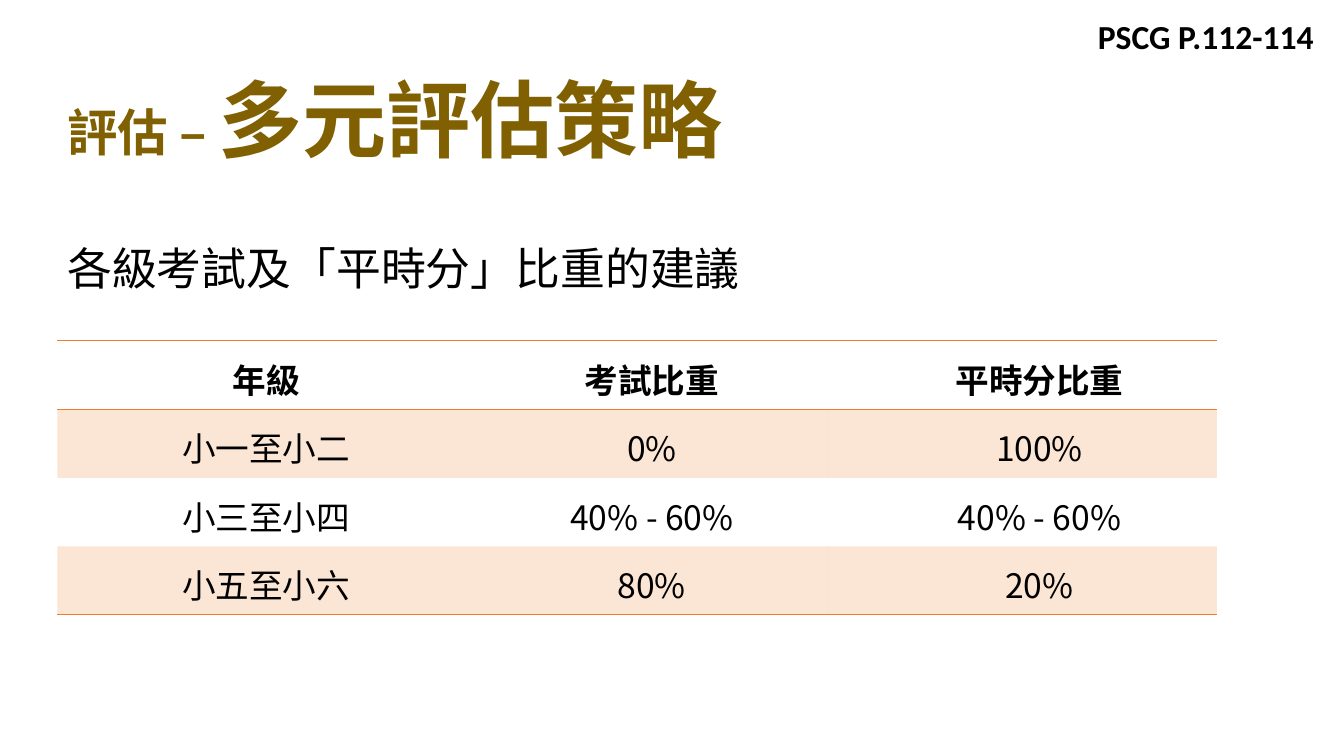
"""Build the slide on diversified assessment strategies and score weightings."""
from dataclasses import dataclass

from lxml import etree
from pptx import Presentation
from pptx.dml.color import RGBColor
from pptx.enum.text import MSO_ANCHOR, MSO_AUTO_SIZE, PP_ALIGN
from pptx.oxml.ns import qn
from pptx.util import Inches, Pt

LEFT, CENTER = PP_ALIGN.LEFT, PP_ALIGN.CENTER
TOP, MIDDLE = MSO_ANCHOR.TOP, MSO_ANCHOR.MIDDLE
GROW = MSO_AUTO_SIZE.SHAPE_TO_FIT_TEXT
TITLE_ONLY = 5
PLAIN_TABLE_STYLE = "{2D5ABB26-0587-4C30-8999-92F81FD0307C}"


@dataclass(frozen=True)
class Theme:
    """Colours, fonts and type sizes."""
    cjk_font: str = "Noto Sans CJK SC"
    latin_font: str = "Calibri"
    ink: str = "000000"
    gold: str = "806000"
    orange: str = "ED7D31"
    band_alpha: int = 20
    rule_points: int = 1
    line_spacing: float = 1.15
    title_size: int = 60
    topic_size: int = 36
    lead_size: int = 32
    body_size: int = 24


@dataclass(frozen=True)
class Area:
    """A place on the slide in inches."""
    left: float
    top: float
    width: float
    height: float

    def lengths(self) -> tuple:
        """Give left, top, width and height as lengths."""
        return tuple(map(Inches, (self.left, self.top, self.width, self.height)))


@dataclass(frozen=True)
class Label:
    """A text box with one line of text."""
    text: str
    area: Area
    size: int
    font: str
    bold: bool = False
    wrap: bool = False


THEME = Theme()
TITLE_AREA = Area(0.57, 0.62, 6.79, 1.11)
TABLE_AREA = Area(0.57, 3.38, 11.5, 2.72)
COLUMN_WIDTHS = (3.81, 3.84, 3.85)
CELL_MARGIN = 0.07
CELL_INDENT = 0.33
LABELS = (
    Label("各級考試及「平時分」比重的建議", Area(0.57, 2.34, 6.93, 0.64),
          THEME.lead_size, THEME.cjk_font),
    Label("PSCG P.112-114", Area(10.79, 0.11, 2.54, 0.5),
          THEME.body_size, THEME.latin_font, bold=True, wrap=True),
)
WEIGHTINGS = (
    ("年級", "考試比重", "平時分比重"),
    ("小一至小二", "0%", "100%"),
    ("小三至小四", "40% - 60%", "40% - 60%"),
    ("小五至小六", "80%", "20%"),
)


def add_span(para, text: str, *, size: int, font: str = THEME.cjk_font,
             color: str = THEME.ink, bold: bool = False) -> None:
    """Append formatted text to a paragraph."""
    span = para.add_run()
    span.text = text
    span.font.size = Pt(size)
    span.font.name = font
    span.font.bold = bold
    span.font.color.rgb = RGBColor.from_string(color)


def add_title(page) -> None:
    """Place and format the title placeholder."""
    title = page.shapes.title
    title.left, title.top, title.width, title.height = TITLE_AREA.lengths()
    frame = title.text_frame
    frame.word_wrap = False
    frame.auto_size = GROW
    frame.vertical_anchor = TOP
    para = frame.paragraphs[0]
    para.alignment = LEFT
    para.line_spacing = 1.0
    for text, size in (("評估 – ", THEME.topic_size), ("多元評估策略", THEME.title_size)):
        add_span(para, text, size=size, color=THEME.gold, bold=True)


def add_label(page, label: Label) -> None:
    """Draw one text box."""
    box = page.shapes.add_textbox(*label.area.lengths())
    frame = box.text_frame
    frame.word_wrap = label.wrap
    frame.auto_size = GROW
    add_span(frame.paragraphs[0], label.text, size=label.size, font=label.font,
             bold=label.bold)


def add_rule(properties, side: str) -> None:
    """Add an orange border to one side of a table cell."""
    line = etree.SubElement(properties, qn(f"a:ln{side}"), w=str(Pt(THEME.rule_points)))
    fill = etree.SubElement(line, qn("a:solidFill"))
    etree.SubElement(fill, qn("a:srgbClr"), val=THEME.orange)


def fill_cell(cell, element, row: int, text: str) -> None:
    """Write and format one table cell."""
    cell.margin_left = cell.margin_right = Inches(CELL_MARGIN)
    cell.margin_top = cell.margin_bottom = 0
    cell.vertical_anchor = MIDDLE
    para = cell.text_frame.paragraphs[0]
    para.alignment = CENTER
    para.line_spacing = THEME.line_spacing
    add_span(para, text, size=THEME.body_size, bold=row == 0)
    next(element.iter(qn("a:pPr"))).set("marL", str(Inches(CELL_INDENT)))

    properties = element.find(qn("a:tcPr"))
    if row == 0:
        add_rule(properties, "T")
    if row in (0, len(WEIGHTINGS) - 1):
        add_rule(properties, "B")
    if row % 2:
        cell.fill.solid()
        cell.fill.fore_color.rgb = RGBColor.from_string(THEME.orange)
        color = properties.find(f"{qn('a:solidFill')}/{qn('a:srgbClr')}")
        etree.SubElement(color, qn("a:alpha"), val=str(THEME.band_alpha * 1000))
    else:
        cell.fill.background()


def add_weightings(page) -> None:
    """Draw the table of weightings by grade."""
    holder = page.shapes.add_table(len(WEIGHTINGS), len(COLUMN_WIDTHS),
                                   *TABLE_AREA.lengths())
    table = holder.table
    table.first_row = table.horz_banding = False
    next(holder.element.iter(qn("a:tableStyleId"))).text = PLAIN_TABLE_STYLE
    for column, width in zip(table.columns, COLUMN_WIDTHS):
        column.width = Inches(width)
    elements = holder.element.iter(qn("a:tc"))
    for row, texts in enumerate(WEIGHTINGS):
        for column, text in enumerate(texts):
            fill_cell(table.cell(row, column), next(elements), row, text)


def set_east_asian_fonts(page) -> None:
    """Use each span's font for its East Asian letters too."""
    for latin in list(page.element.iter(qn("a:latin"))):
        east_asian = etree.Element(qn("a:ea"), typeface=latin.get("typeface"))
        latin.addnext(east_asian)


def main() -> None:
    """Build and save the deck."""
    deck = Presentation()
    deck.slide_width, deck.slide_height = Inches(13.33), Inches(7.5)
    page = deck.slides.add_slide(deck.slide_layouts[TITLE_ONLY])
    add_title(page)
    add_weightings(page)
    for label in LABELS:
        add_label(page, label)
    set_east_asian_fonts(page)
    deck.save("out.pptx")


if __name__ == "__main__":
    main()
